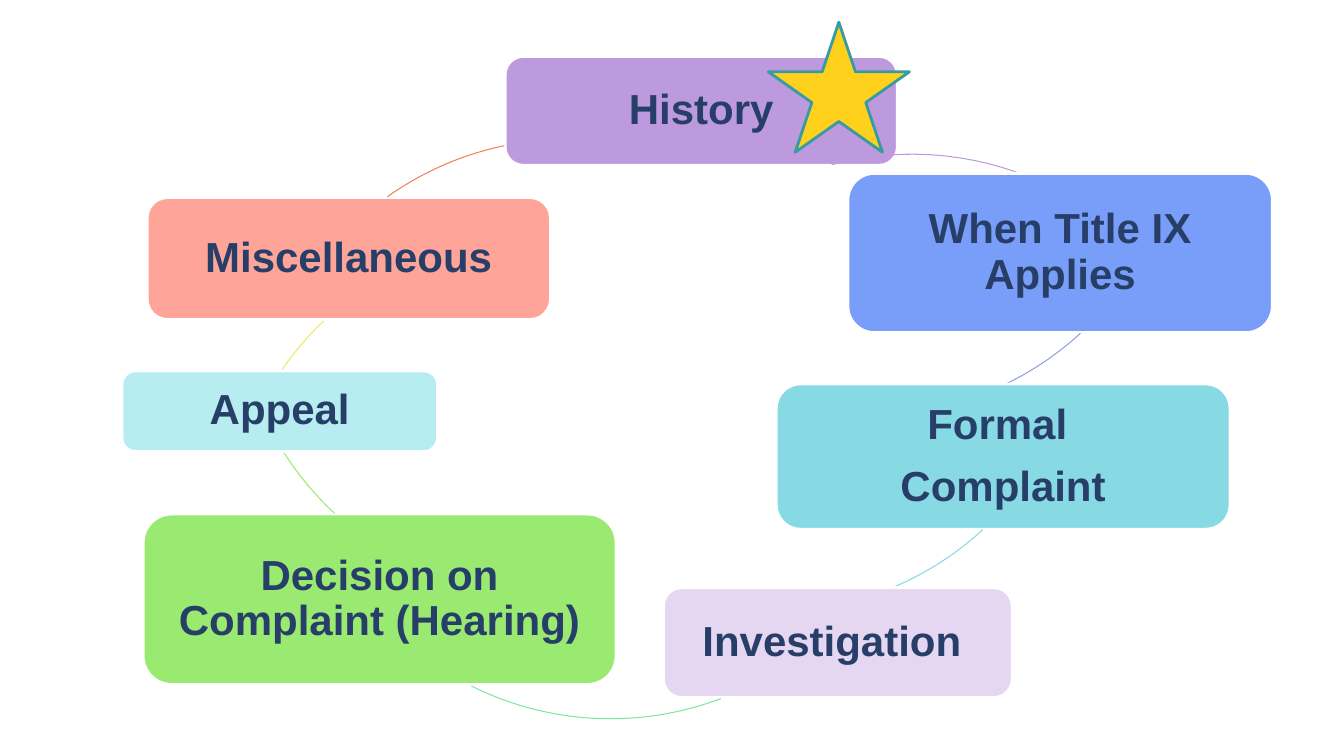
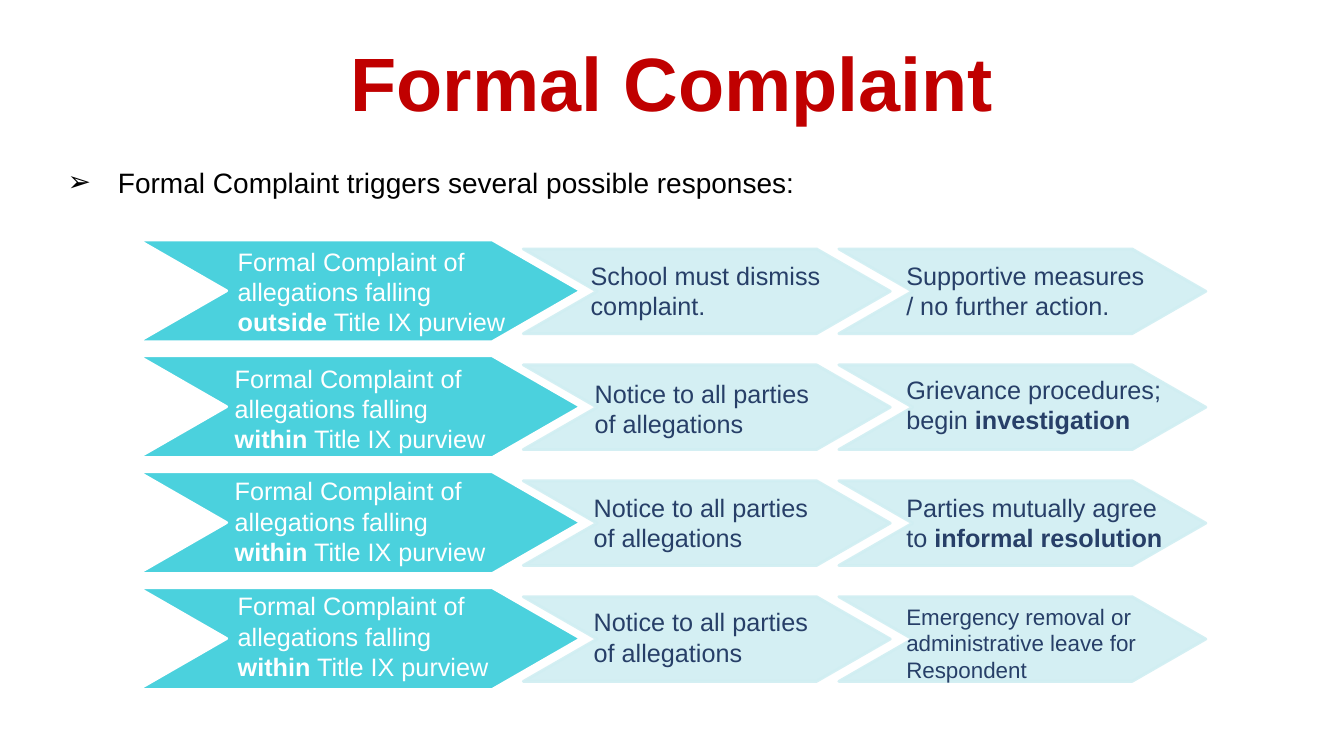
from lxml import etree
from pptx import Presentation
from pptx import util as u
from pptx.dml.color import RGBColor
from pptx.enum import shapes, text
from pptx.oxml.ns import qn

NAVY, WHITE, BLACK, RED = "273F68", "FFFFFF", "000000", "C00000"
TURQUOISE, PALE = "4BD1DD", "D0EEF2"
FONT = "Arial"
BLANK, TITLE_ONLY = 6, 5
CENTER, LEFT = text.PP_ALIGN.CENTER, text.PP_ALIGN.LEFT
MIDDLE, TOP, BOTTOM = (text.MSO_ANCHOR.MIDDLE, text.MSO_ANCHOR.TOP,
                       text.MSO_ANCHOR.BOTTOM)

# Box (left, top, width, height), fill, paragraphs
TOPICS = [
    ((5.01, 0.56, 3.89, 1.08), "BD9ADD", ["History"]),
    ((8.41, 1.72, 4.21, 1.58), "799EF9", ["When Title IX Applies"]),
    ((7.7, 3.81, 4.5, 1.44), "87DAE3", ["Formal ", "Complaint"]),
    ((6.58, 5.83, 3.46, 1.09), "E5D7F1", ["Investigation "]),
    ((1.42, 5.1, 4.69, 1.69), "9AEA72", ["Decision on Complaint (Hearing)"]),
    ((1.21, 3.68, 3.13, 0.8), "B7EDF1", ["Appeal"]),
    ((1.46, 1.96, 4, 1.21), "FEA498", ["Miscellaneous"]),
]
# Left and top of the circle, start and end angle in degrees, colour
ARC_SIZE = 6.19
ARCS = [
    (5.95, 1.53, 255.1, 290.1, "BD9ADD"),
    (5.53, -2.07, 47.5, 63.9, "91A0E0"),
    (4.56, -0.12, 47.5, 67.1, "87DAE3"),
    (2.96, 0.94, 69.3, 116.6, "7DE6A5"),
    (2.33, -0.27, 132.9, 147.7, "9AEA72"),
    (2.25, 2.33, 214.6, 226.8, "EEE867"),
    (2.54, 1.38, 234.6, 258.2, "F3805C"),
]

# Chevrons of a row: left, top within the row, width, height, fill, line, opacity
CHEVRONS = [
    (1.37, 0, 4.39, 1.01, TURQUOISE, WHITE, 100),
    (5.19, 0.09, 3.64, 0.84, PALE, PALE, 90),
    (8.32, 0.09, 3.64, 0.84, PALE, PALE, 90),
]
CHEVRON_POINT = 0.87
FIRST_ROW, ROW_STEP = 2.38, 1.15


def complaint(scope):
    return [("Formal Complaint of allegations falling ", False), (scope, True),
            (" Title IX purview", False)]


NOTICE = [("Notice to all parties of allegations", False)]
# Captions of each row: left, top within the row, width, size, runs
RESPONSES = [
    [(1.76, 0.01, 3.5, 18, complaint("outside")),
     (5.26, 0.15, 3.08, 18, [("School must dismiss complaint.", False)]),
     (8.39, 0.15, 3.08, 18, [("Supportive measures / no further action.", False)])],
    [(1.73, 0.02, 3.27, 18, complaint("within")),
     (5.3, 0.17, 3.08, 18, NOTICE),
     (8.39, 0.13, 3.32, 18, [("Grievance procedures; begin ", False),
                             ("investigation", True)])],
    [(1.73, -0.01, 3.27, 18, complaint("within")),
     (5.29, 0.15, 3.08, 18, NOTICE),
     (8.39, 0.15, 3.32, 18, [("Parties mutually agree to ", False),
                             ("informal resolution", True)])],
    [(1.76, -0.02, 3.27, 18, complaint("within")),
     (5.29, 0.14, 3.08, 18, NOTICE),
     (8.39, 0.1, 3.32, 16, [("Emergency removal or administrative leave "
                             "for Respondent", False)])],
]


def rgb(value):
    return RGBColor.from_string(value)


def apply(target, **values):
    for name, value in values.items():
        setattr(target, name, value)


def inches(box):
    return [u.Inches(value) for value in box]


def set_opacity(fill_parent, percent):
    color = fill_parent.find(qn("a:solidFill"))[0]
    etree.SubElement(color, qn("a:alpha")).set("val", str(percent * 1000))


def add_shape(slide, kind, box, fill, line, line_width, opacity=100):
    shape = slide.shapes.add_shape(kind, *inches(box))
    shape.shadow.inherit = False
    if fill:
        shape.fill.solid()
        shape.fill.fore_color.rgb = rgb(fill)
    else:
        shape.fill.background()
    shape.line.color.rgb = rgb(line)
    shape.line.width = u.Pt(line_width)
    if opacity < 100:
        properties = shape.fill._xPr
        set_opacity(properties, opacity)
        set_opacity(properties.find(qn("a:ln")), opacity)
    return shape


def set_frame(shape, anchor, horizontal=0, vertical=0):
    frame = shape.text_frame
    apply(frame, word_wrap=True, auto_size=text.MSO_AUTO_SIZE.NONE,
          vertical_anchor=anchor,
          margin_left=u.Inches(horizontal), margin_right=u.Inches(horizontal),
          margin_top=u.Inches(vertical), margin_bottom=u.Inches(vertical))
    return frame


def write(paragraph, runs, size, color, align=LEFT):
    """Fill a paragraph with (text, bold) runs."""
    paragraph.alignment = align
    for words, bold in runs:
        run = paragraph.add_run()
        run.text = words
        apply(run.font, name=FONT, size=u.Pt(size), bold=bold)
        run.font.color.rgb = rgb(color)


def set_indent(paragraph, left, first=0):
    properties = paragraph._p.get_or_add_pPr()
    properties.set("marL", str(u.Inches(left)))
    properties.set("indent", str(u.Inches(first)))
    return properties


def set_bullet(paragraph, character, color):
    properties = set_indent(paragraph, 0.67, -0.5)
    bullet_color = etree.SubElement(properties, qn("a:buClr"))
    etree.SubElement(bullet_color, qn("a:srgbClr")).set("val", color)
    etree.SubElement(properties, qn("a:buFont")).set("typeface", FONT)
    etree.SubElement(properties, qn("a:buChar")).set("char", character)


def add_topic(slide, box, fill, lines):
    shape = add_shape(slide, shapes.MSO_SHAPE.ROUNDED_RECTANGLE, box, fill, WHITE, 2)
    frame = set_frame(shape, MIDDLE, 0.18, 0.12)
    for index, line in enumerate(lines):
        paragraph = frame.add_paragraph() if index else frame.paragraphs[0]
        paragraph.line_spacing = 0.9
        if index < len(lines) - 1:
            paragraph.space_after = u.Pt(12)
        write(paragraph, [(line, True)], 30, NAVY, CENTER)


def add_arc(slide, left, top, start, end, color):
    arc = add_shape(slide, shapes.MSO_SHAPE.ARC, (left, top, ARC_SIZE, ARC_SIZE),
                    None, color, 0.75)
    for index, degrees in enumerate((start, end)):
        arc.adjustments[index] = degrees * 0.6  # 60000 units a degree, per 100000


def add_title(slide, box, words):
    title = slide.shapes.title
    apply(title, **dict(zip(("left", "top", "width", "height"), inches(box))))
    frame = set_frame(title, BOTTOM)
    write(frame.paragraphs[0], [(words, True)], 54, RED, CENTER)


def add_lead(slide, box, words):
    frame = set_frame(slide.shapes.add_textbox(*inches(box)), TOP)
    paragraph = frame.paragraphs[0]
    set_bullet(paragraph, "➢", BLACK)
    write(paragraph, [(words, False)], 20, BLACK)


def add_caption(slide, box, runs, size, color):
    frame = set_frame(slide.shapes.add_textbox(*inches(box)), TOP, 0.1, 0.05)
    set_indent(frame.paragraphs[0], 0.5)
    write(frame.paragraphs[0], runs, size, color)


def add_response_row(slide, row_top, captions):
    for left, offset, width, height, fill, line, opacity in CHEVRONS:
        chevron = add_shape(slide, shapes.MSO_SHAPE.CHEVRON,
                            (left, row_top + offset, width, height),
                            fill, line, 2, opacity)
        chevron.adjustments[0] = CHEVRON_POINT
    for column, (left, offset, width, size, runs) in enumerate(captions):
        height = 0.71 if column else 1.01
        add_caption(slide, (left, row_top + offset, width, height), runs, size,
                    NAVY if column else WHITE)


def build_cycle_slide(presentation):
    slide = presentation.slides.add_slide(presentation.slide_layouts[BLANK])
    for topic, arc in zip(TOPICS, ARCS):
        add_topic(slide, *topic)
        add_arc(slide, *arc)
    add_shape(slide, shapes.MSO_SHAPE.STAR_5_POINT, (7.62, 0.22, 1.4, 1.29),
              "FFD11D", "379BA3", 2)


def build_complaint_slide(presentation):
    slide = presentation.slides.add_slide(presentation.slide_layouts[TITLE_ONLY])
    add_title(slide, (1.5, 0.33, 10.33, 0.93), "Formal Complaint")
    add_lead(slide, (0.5, 1.64, 11.46, 0.74),
             "Formal Complaint triggers several possible responses:")
    for row, captions in enumerate(RESPONSES):
        add_response_row(slide, FIRST_ROW + row * ROW_STEP, captions)


def main():
    presentation = Presentation()
    apply(presentation, slide_width=u.Inches(13.33), slide_height=u.Inches(7.5))
    build_cycle_slide(presentation)
    build_complaint_slide(presentation)
    presentation.save("out.pptx")


if __name__ == "__main__":
    main()
